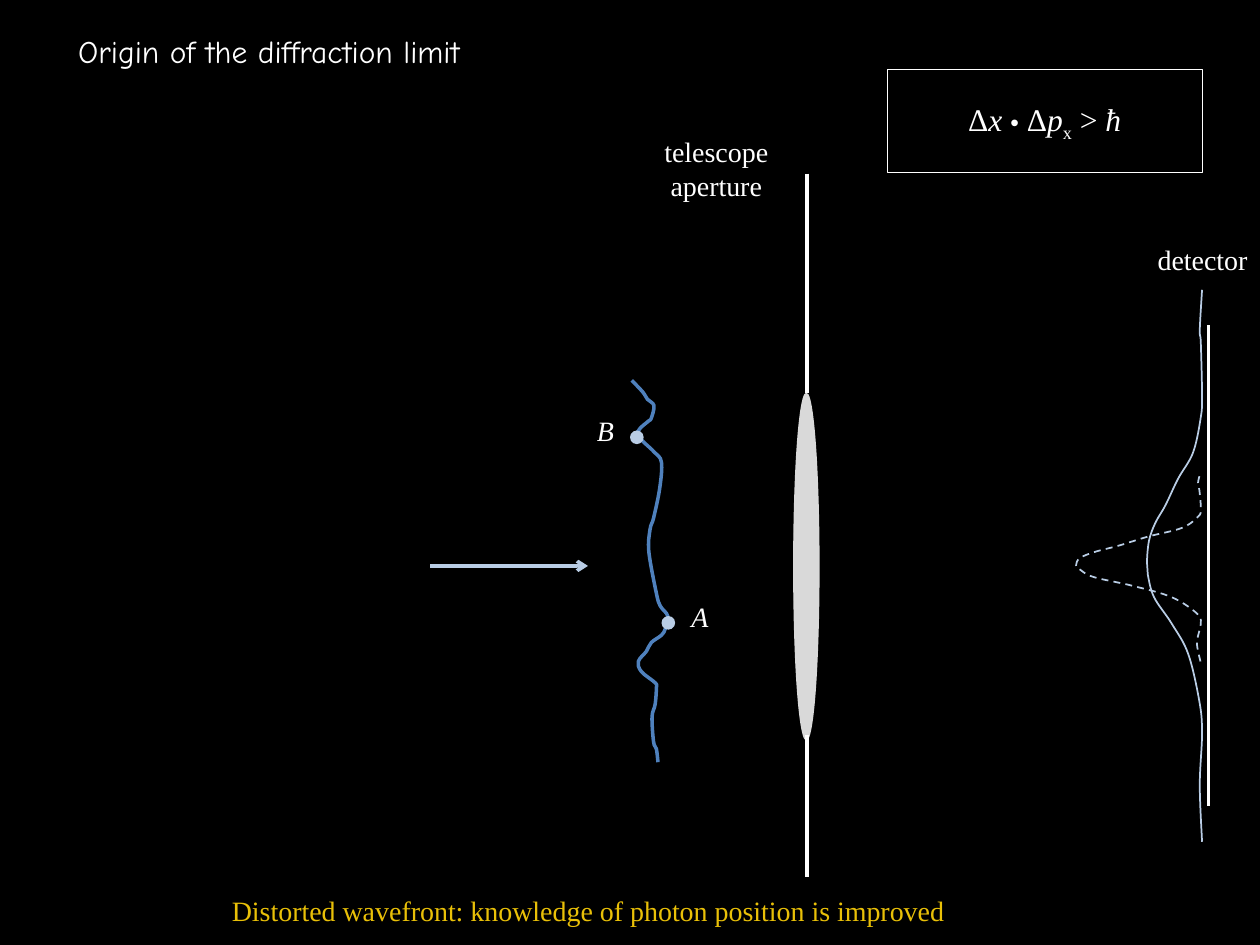
"""Build the slide on the origin of the diffraction limit."""
from lxml import etree
from pptx import Presentation
from pptx.dml.color import RGBColor
from pptx.enum.dml import MSO_LINE_DASH_STYLE as Dash
from pptx.enum.shapes import MSO_CONNECTOR as Connector, MSO_SHAPE as Shape
from pptx.enum.text import MSO_ANCHOR as Anchor, MSO_AUTO_SIZE as AutoSize, PP_ALIGN as Align
from pptx.oxml.ns import qn
from pptx.util import Pt

BLACK = RGBColor(0x00, 0x00, 0x00)
WHITE = RGBColor(0xFF, 0xFF, 0xFF)
PALE_BLUE = RGBColor(0xB9, 0xCD, 0xE5)
BLUE = RGBColor(0x4F, 0x81, 0xBD)
GREY = RGBColor(0xD9, 0xD9, 0xD9)
GOLD = RGBColor(0xE9, 0xC0, 0x08)

SHARP_PROFILE = [
    (686, 378), (684, 367.2), (686.2, 356.4), (684, 350.6), (669.6, 341.3),
    (647.3, 334.8), (625, 329.8), (617, 325.4), (614.9, 323.3), (617, 319),
    (625.7, 315.4), (639.4, 311.8), (655.9, 306.7), (675.4, 301.7),
    (684.7, 295.2), (686.2, 290.9), (685.4, 280.1), (684.6, 276), (686, 270),
]
BROAD_PROFILE = [
    (686.9, 481), (685.6, 448.6), (686.9, 419), (685.4, 401), (679, 373.7),
    (669.6, 356.4), (659.5, 341.3), (655.9, 328.3), (655.4, 321.1),
    (656.6, 308.9), (660.2, 298.8), (666, 288.7), (673.2, 273.6),
    (681.8, 258.5), (686.2, 238.3), (686.9, 226), (686.2, 195.8),
    (685.6, 188.6), (686.9, 165.6),
]
WAVEFRONT = [
    (361, 217.4), (367.2, 223.9), (370, 228.2), (373.7, 231.8),
    (372.2, 239), (370.8, 240.5), (365.8, 244.8), (364.3, 248.4),
    (367.9, 252.7), (374, 258.5), (378, 264.2), (377, 279), (373.5, 296),
    (371.5, 302.4), (370.8, 315.4), (375.1, 339.1), (377.3, 346.3),
    (381.6, 352.1), (380.2, 359.3), (378, 363), (372.2, 367.2),
    (369.4, 372.2), (364.8, 378), (366.5, 383.8), (374.4, 390.2),
    (375.1, 393.1), (374.4, 402.5), (372.6, 409.7), (373.5, 424.1),
    (375.1, 428), (376, 435.6),
]


def round_corners(outline):
    """Turn the straight segments of a freeform outline into smooth curves."""
    nodes = list(outline.iter(qn("a:pt")))
    points = [(int(node.get("x")), int(node.get("y"))) for node in nodes]
    padded = [points[0], *points, points[-1]]
    quads = zip(padded, padded[1:], padded[2:], padded[3:])
    for node, (before, start, end, after) in zip(nodes[1:], quads):
        first = [s + (e - b) / 6 for b, s, e in zip(before, start, end)]
        second = [e - (a - s) / 6 for s, e, a in zip(start, end, after)]
        segment = etree.Element(qn("a:cubicBezTo"))
        for x, y in (first, second, end):
            etree.SubElement(segment, qn("a:pt"), x=str(round(x)), y=str(round(y)))
        line = node.getparent()
        line.getparent().replace(line, segment)


def add_text(paragraph, text, font="Times New Roman", size=16, color=WHITE,
             italic=False, baseline=0):
    """Append a formatted run to the paragraph."""
    run = paragraph.add_run()
    run.text = text
    run.font.name = font
    run.font.size = Pt(size)
    run.font.color.rgb = color
    run.font.italic = italic
    if baseline:
        run._r.get_or_add_rPr().set("baseline", str(baseline))


class Canvas:
    """Holds the current slide and draws styled elements on it."""

    def __init__(self, slide):
        self.shapes = slide.shapes
        slide.background.fill.solid()
        slide.background.fill.fore_color.rgb = BLACK

    def title(self, text, *box):
        title = self.shapes.title
        title.left, title.top, title.width, title.height = map(Pt, box)
        title.text_frame.word_wrap = False
        title.text_frame.auto_size = AutoSize.SHAPE_TO_FIT_TEXT
        title.text_frame.vertical_anchor = Anchor.TOP
        paragraph = title.text_frame.paragraphs[0]
        paragraph.alignment = Align.LEFT
        add_text(paragraph, text, font="Comic Neue", size=18)

    def label(self, text, *box, space_before=3, **style):
        frame = self.shapes.add_textbox(*map(Pt, box)).text_frame
        frame.word_wrap = True
        paragraph = frame.paragraphs[0]
        paragraph.alignment = Align.CENTER
        paragraph.space_before = Pt(space_before)
        add_text(paragraph, text, **style)

    def line(self, *ends, color=WHITE, arrow=False):
        line = self.shapes.add_connector(Connector.STRAIGHT, *map(Pt, ends))
        line.line.color.rgb = color
        line.line.width = Pt(2)
        if arrow:
            etree.SubElement(line.line._get_or_add_ln(), qn("a:tailEnd"), type="arrow")
        etree.SubElement(line._element.spPr, qn("a:effectLst"))

    def ellipse(self, *box, color, outlined=False):
        ellipse = self.shapes.add_shape(Shape.OVAL, *map(Pt, box))
        ellipse.shadow.inherit = False
        ellipse.fill.solid()
        ellipse.fill.fore_color.rgb = color
        if outlined:
            ellipse.line.color.rgb = color
            ellipse.line.width = Pt(0.75)
        else:
            ellipse.line.fill.background()

    def curve(self, points, color, width, dash=None):
        start, *rest = [(Pt(x), Pt(y)) for x, y in points]
        builder = self.shapes.build_freeform(*start)
        builder.add_line_segments(rest, close=False)
        curve = builder.convert_to_shape()
        round_corners(curve._element.spPr)
        curve.shadow.inherit = False
        curve.fill.background()
        curve.line.color.rgb = color
        curve.line.width = Pt(width)
        if dash:
            curve.line.dash_style = dash

    def formula(self, runs, *box):
        frame = self.shapes.add_shape(Shape.RECTANGLE, *map(Pt, box))
        frame.shadow.inherit = False
        frame.fill.background()
        frame.line.color.rgb = WHITE
        frame.line.width = Pt(0.75)
        frame.text_frame.vertical_anchor = Anchor.MIDDLE
        paragraph = frame.text_frame.paragraphs[0]
        paragraph.alignment = Align.CENTER
        for text, style in runs:
            add_text(paragraph, text, **{"size": 18, **style})


def main():
    presentation = Presentation()
    presentation.slide_width, presentation.slide_height = Pt(720), Pt(540)
    canvas = Canvas(presentation.slides.add_slide(presentation.slide_layouts[5]))

    canvas.title("Origin of the diffraction limit", 37.5, 14.4, 268.5, 29)
    canvas.line(690.5, 185.8, 690.5, 460.8)
    canvas.label("telescope aperture", 346.3, 73.6, 126, 51)
    canvas.label("detector", 624.2, 135, 126, 51)
    canvas.line(246, 323.4, 336, 323.4, color=PALE_BLUE, arrow=True)
    canvas.ellipse(453.6, 224.8, 14.4, 198, color=GREY, outlined=True)
    for top, bottom in ((99.2, 224.8), (420, 501.2)):
        canvas.line(461, top, 461, bottom)
    canvas.curve(SHARP_PROFILE, PALE_BLUE, 1, Dash.DASH)
    canvas.label("Distorted wavefront: knowledge of photon position is improved",
                 80.6, 507.2, 511.2, 26.6, space_before=0, color=GOLD)
    canvas.curve(WAVEFRONT, BLUE, 2)
    canvas.curve(BROAD_PROFILE, PALE_BLUE, 1)
    for name, dot_left, dot_top, label_left in (
            ("A", 378, 352, 386), ("B", 360, 246, 332)):
        canvas.ellipse(dot_left, dot_top, 7.8, 7.8, color=PALE_BLUE)
        canvas.label(name, label_left, dot_top - 13.2, 28, 26.6, italic=True)
    canvas.formula([
        ("Δ", {}), ("x ", {"italic": True}), ("•", {"font": "Arial", "size": 14}),
        (" Δ", {}), ("p", {"italic": True}), ("x", {"baseline": -25000}),
        (" > ", {}), ("ħ", {"italic": True}),
    ], 507, 39.8, 180, 59)

    presentation.save("out.pptx")


if __name__ == "__main__":
    main()
